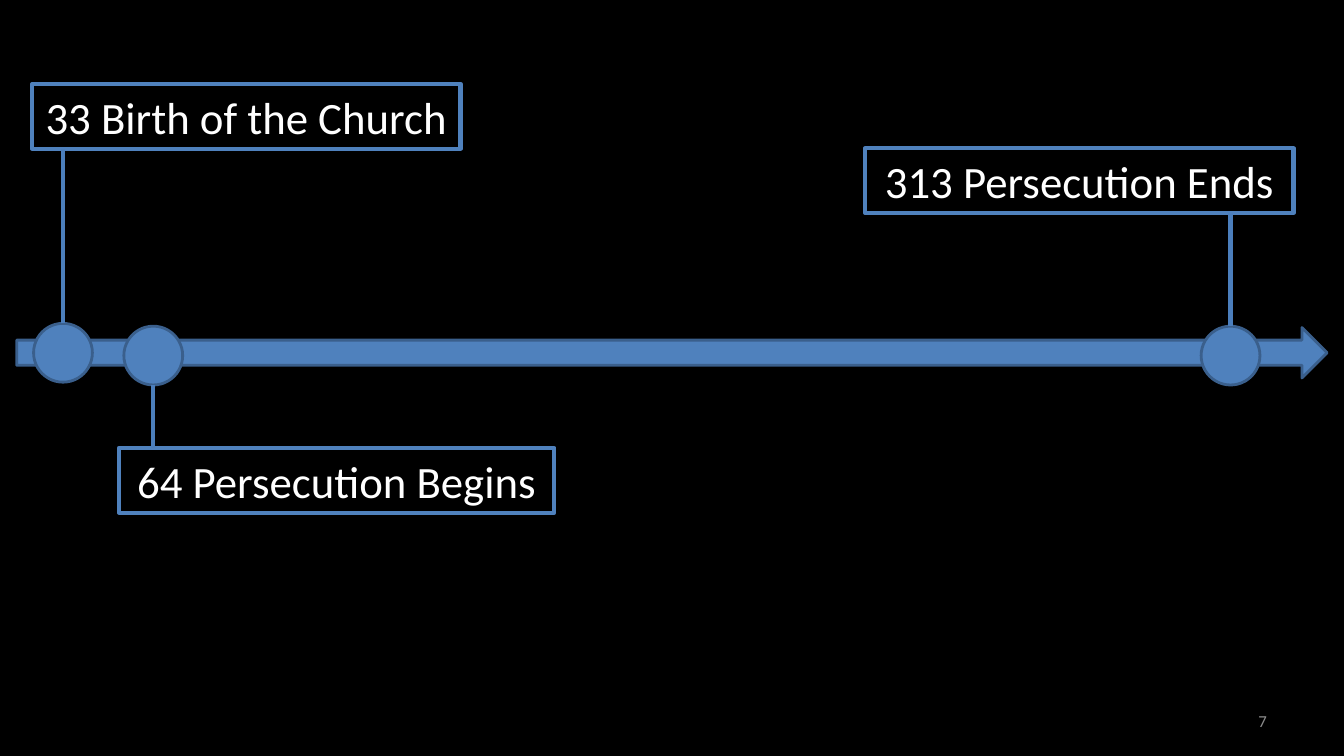
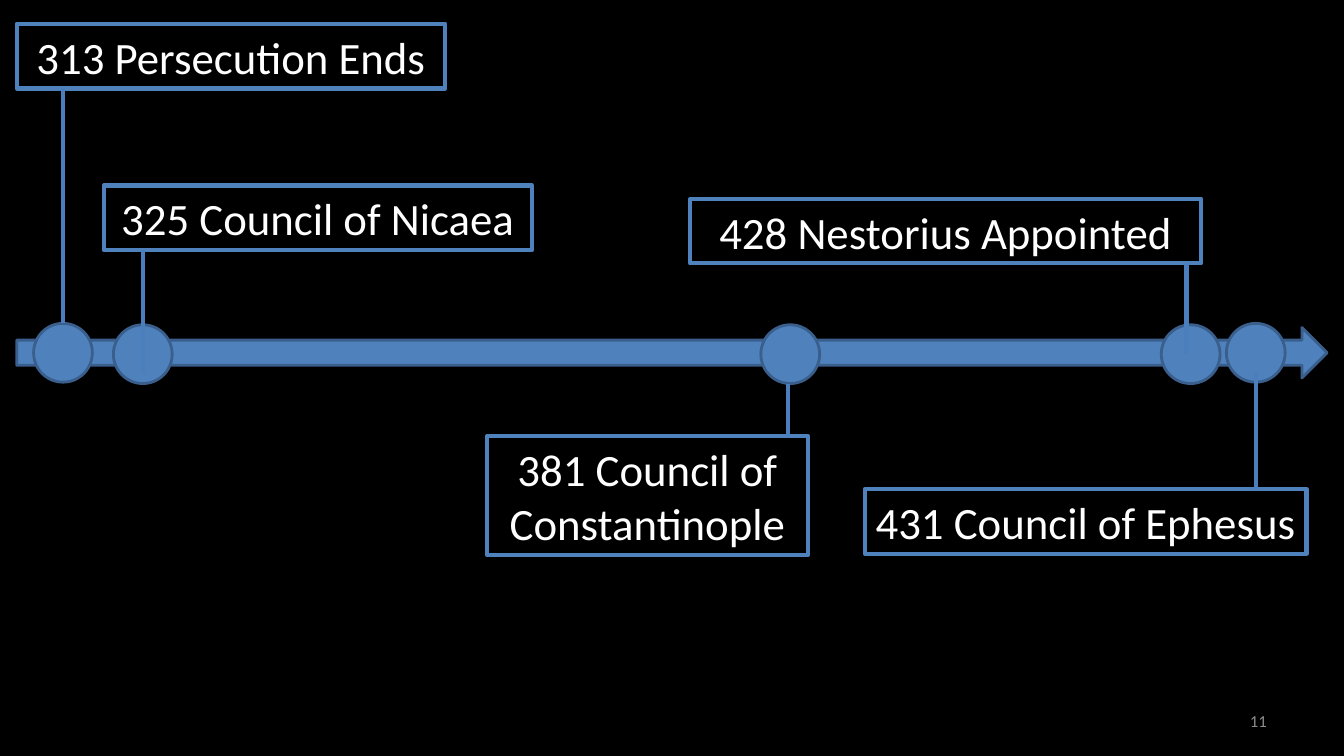
from dataclasses import dataclass

from lxml import etree
from pptx import Presentation
from pptx.dml.color import RGBColor
from pptx.enum.shapes import MSO_CONNECTOR, MSO_SHAPE
from pptx.enum.text import MSO_ANCHOR, PP_ALIGN
from pptx.oxml.ns import qn
from pptx.util import Pt

ARROW, OVAL, RECT = MSO_SHAPE.RIGHT_ARROW, MSO_SHAPE.OVAL, MSO_SHAPE.RECTANGLE
STRAIGHT = MSO_CONNECTOR.STRAIGHT
MIDDLE = MSO_ANCHOR.MIDDLE
CENTER, RIGHT = PP_ALIGN.CENTER, PP_ALIGN.RIGHT


@dataclass(frozen=True)
class Theme:
    font: str = "Calibri"
    label_size: int = 32
    number_size: int = 12
    background: RGBColor = RGBColor(0x00, 0x00, 0x00)
    accent: RGBColor = RGBColor(0x4F, 0x81, 0xBD)
    outline: RGBColor = RGBColor(0x3A, 0x5F, 0x8C)
    stem: RGBColor = RGBColor(0x4B, 0x7E, 0xBC)
    text: RGBColor = RGBColor(0xFF, 0xFF, 0xFF)
    muted: RGBColor = RGBColor(0x8C, 0x8C, 0x8C)


T = Theme()
AXIS_Y = 252
DOT = 42
LINE_H = 39
INSET_H = 7.2

# label, box left, top, width, text lines, dot centre x, y, stem x, stem end y
SLIDES = [
    ("7", [
        ("33 Birth of the Church", 23, 60, 306, 1, 45, 252, 45, 231),
        ("64 Persecution Begins", 85, 320, 311, 1, 109.5, 254, 109.5, 275),
        ("313 Persecution Ends", 618, 106, 306, 1, 879, 254, 879, 233),
    ]),
    ("11", [
        ("313 Persecution Ends", 12, 17, 306, 1, 45, 252, 45, 231),
        ("325 Council of Nicaea", 74, 132.5, 306, 1, 102, 253, 102, 266),
        ("381 Council of Constantinople", 348, 311.5, 229, 2, 564.5, 253, 563, 274),
        ("428 Nestorius Appointed", 493, 142, 365, 1, 850.5, 253, 847.5, 253),
        ("431 Council of Ephesus", 617.8, 349.3, 315.4, 1, 897, 252, 897, 266),
    ]),
]


def add_solid(s, kind, x, y, w, h):
    sp = s.shapes.add_shape(kind, Pt(x), Pt(y), Pt(w), Pt(h))
    sp.shadow.inherit = False
    sp.fill.solid()
    sp.fill.fore_color.rgb = T.accent
    sp.line.color.rgb = T.outline
    sp.line.width = Pt(2)
    return sp


def set_text(sp, text, size, color, align):
    tf = sp.text_frame
    tf.word_wrap = True
    tf.vertical_anchor = MIDDLE
    p = tf.paragraphs[0]
    p.text = text
    p.alignment = align
    p.font.name = T.font
    p.font.size = Pt(size)
    p.font.color.rgb = color


prs = Presentation()
prs.slide_width, prs.slide_height = Pt(960), Pt(540)
bg = prs.slide_master.background.fill
bg.solid()
bg.fore_color.rgb = T.background

for number, events in SLIDES:
    s = prs.slides.add_slide(prs.slide_layouts[6])
    num = s.shapes.add_textbox(Pt(688), Pt(500.5), Pt(224), Pt(29))
    set_text(num, number, T.number_size, T.muted, RIGHT)
    add_solid(s, ARROW, 12, AXIS_Y - 18, 936, 36)

    for label, x, y, w, lines, dot_x, dot_y, stem_x, stem_y in events:
        h = lines * LINE_H + INSET_H
        add_solid(s, OVAL, dot_x - DOT / 2, dot_y - DOT / 2, DOT, DOT)

        box = add_solid(s, RECT, x, y, w, h)
        box.fill.background()
        box.line.color.rgb = T.accent
        box.line.width = Pt(3)
        set_text(box, label, T.label_size, T.text, CENTER)

        edge_y = y + h if y < AXIS_Y else y
        stem = s.shapes.add_connector(
            STRAIGHT, Pt(stem_x), Pt(stem_y), Pt(stem_x), Pt(edge_y))
        stem.line.color.rgb = T.stem
        stem.line.width = Pt(3)
        etree.SubElement(stem._element.spPr, qn("a:effectLst"))

prs.save("out.pptx")
